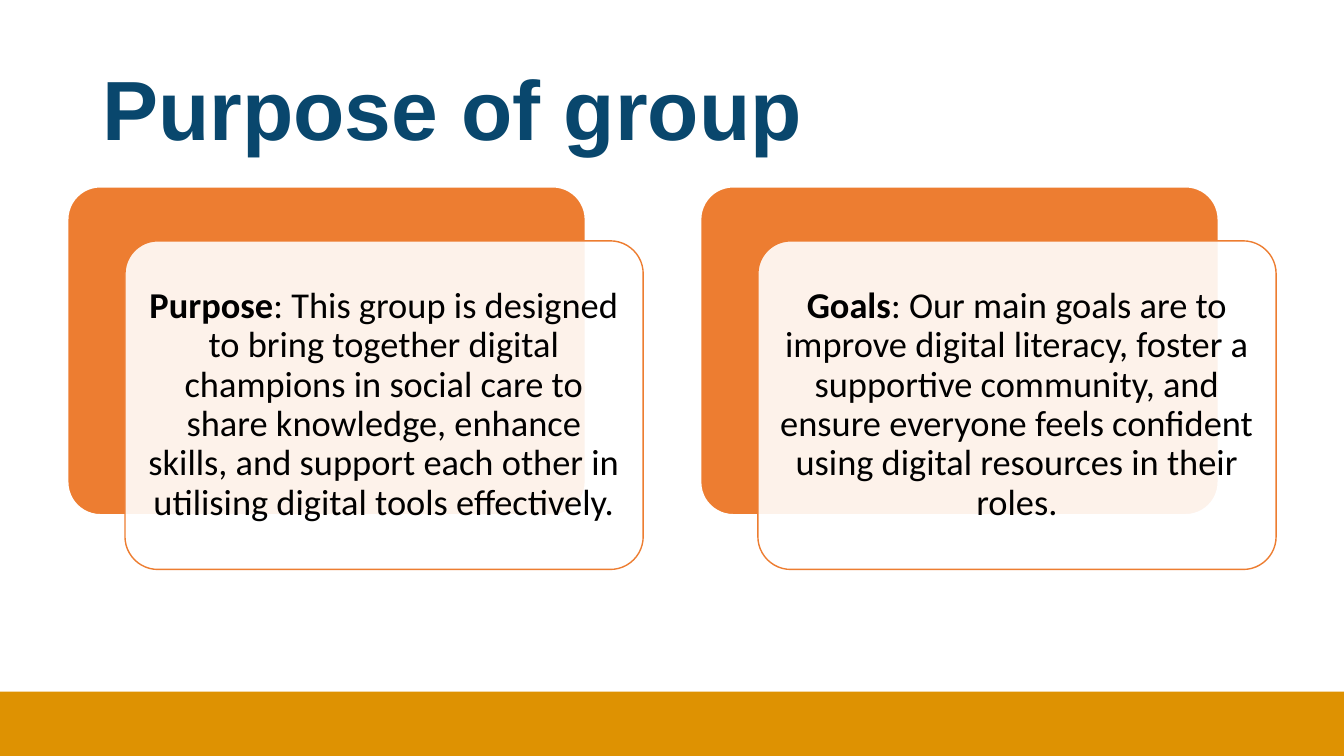
from dataclasses import dataclass

from lxml.etree import SubElement
from pptx import Presentation
from pptx.dml.color import RGBColor as Rgb
from pptx.enum.shapes import MSO_SHAPE as Kind
from pptx.enum.text import MSO_ANCHOR as Anchor, PP_ALIGN as Align
from pptx.oxml.ns import qn
from pptx.util import Cm, Pt

TITLE = "Purpose of group"
CARDS = [
    ("Purpose", ": This group is designed to bring together digital champions in "
     "social care to share knowledge, enhance skills, and support each other in "
     "utilising digital tools effectively."),
    ("Goals", ": Our main goals are to improve digital literacy, foster a supportive "
     "community, and ensure everyone feels confident using digital resources in "
     "their roles."),
]


@dataclass(frozen=True)
class Theme:
    orange: Rgb = Rgb(0xED, 0x7D, 0x31)
    gold: Rgb = Rgb(0xDE, 0x92, 0x02)
    navy: Rgb = Rgb(0x09, 0x47, 0x6D)
    white: Rgb = Rgb(0xFF, 0xFF, 0xFF)
    black: Rgb = Rgb(0, 0, 0)
    head: str = "Arial"
    body: str = "Calibri"
    big: int = 60
    small: int = 26


THEME = Theme()
WIDTH, HEIGHT = 33.87, 19.05
BAND = 1.62
LEFT, TOP, PITCH = 1.7, 4.7, 15.95
CARD_W, CARD_H = 13.06, 8.28
SHIFT_X, SHIFT_Y = 1.45, 1.37
INSET = 0.28


def add_box(slide, kind, x, y, w, h, fill, line=None, weight=1):
    box = slide.shapes.add_shape(kind, Cm(x), Cm(y), Cm(w), Cm(h))
    box.shadow.inherit = False
    box.fill.solid()
    box.fill.fore_color.rgb = fill
    if line is None:
        box.line.fill.background()
    else:
        box.line.color.rgb = line
        box.line.width = Pt(weight)
    return box


def add_panel(slide, x, y, fill, line, weight):
    """Add one rounded rectangle of card size."""
    panel = add_box(slide, Kind.ROUNDED_RECTANGLE, x, y, CARD_W, CARD_H,
                    fill, line, weight)
    panel.adjustments[0] = 0.1
    return panel


def set_alpha(shape, percent):
    color = shape.fill._xPr.find(qn("a:solidFill"))[0]
    SubElement(color, qn("a:alpha")).set("val", str(percent * 1000))


def set_font(para, name, size, color):
    para.line_spacing = 0.9
    para.font.name = name
    para.font.size = Pt(size)
    para.font.color.rgb = color


def add_title(slide):
    box = slide.shapes.add_textbox(Cm(2.33), Cm(1.01), Cm(29.21), Cm(3.68))
    frame = box.text_frame
    frame.word_wrap = True
    frame.vertical_anchor = Anchor.MIDDLE
    para = frame.paragraphs[0]
    para.text = TITLE
    set_font(para, THEME.head, THEME.big, THEME.navy)
    para.font.bold = True


def add_card(slide, x, label, text):
    add_panel(slide, x, TOP, THEME.orange, THEME.white, 1.5)
    front = add_panel(slide, x + SHIFT_X, TOP + SHIFT_Y,
                      THEME.white, THEME.orange, 1)
    set_alpha(front, 90)
    frame = front.text_frame
    frame.word_wrap = True
    frame.vertical_anchor = Anchor.MIDDLE
    frame.margin_left = frame.margin_right = Cm(INSET)
    frame.margin_top = frame.margin_bottom = Cm(INSET)
    para = frame.paragraphs[0]
    para.alignment = Align.CENTER
    set_font(para, THEME.body, THEME.small, THEME.black)
    for part, bold in ((label, True), (text, False)):
        run = para.add_run()
        run.text = part
        run.font.bold = bold


def main():
    deck = Presentation()
    deck.slide_width, deck.slide_height = Cm(WIDTH), Cm(HEIGHT)
    slide = deck.slides.add_slide(deck.slide_layouts[6])
    add_box(slide, Kind.RECTANGLE, 0, HEIGHT - BAND, WIDTH, BAND, THEME.gold)
    add_title(slide)
    for i, (label, text) in enumerate(CARDS):
        add_card(slide, LEFT + i * PITCH, label, text)
    deck.save("out.pptx")


if __name__ == "__main__":
    main()
